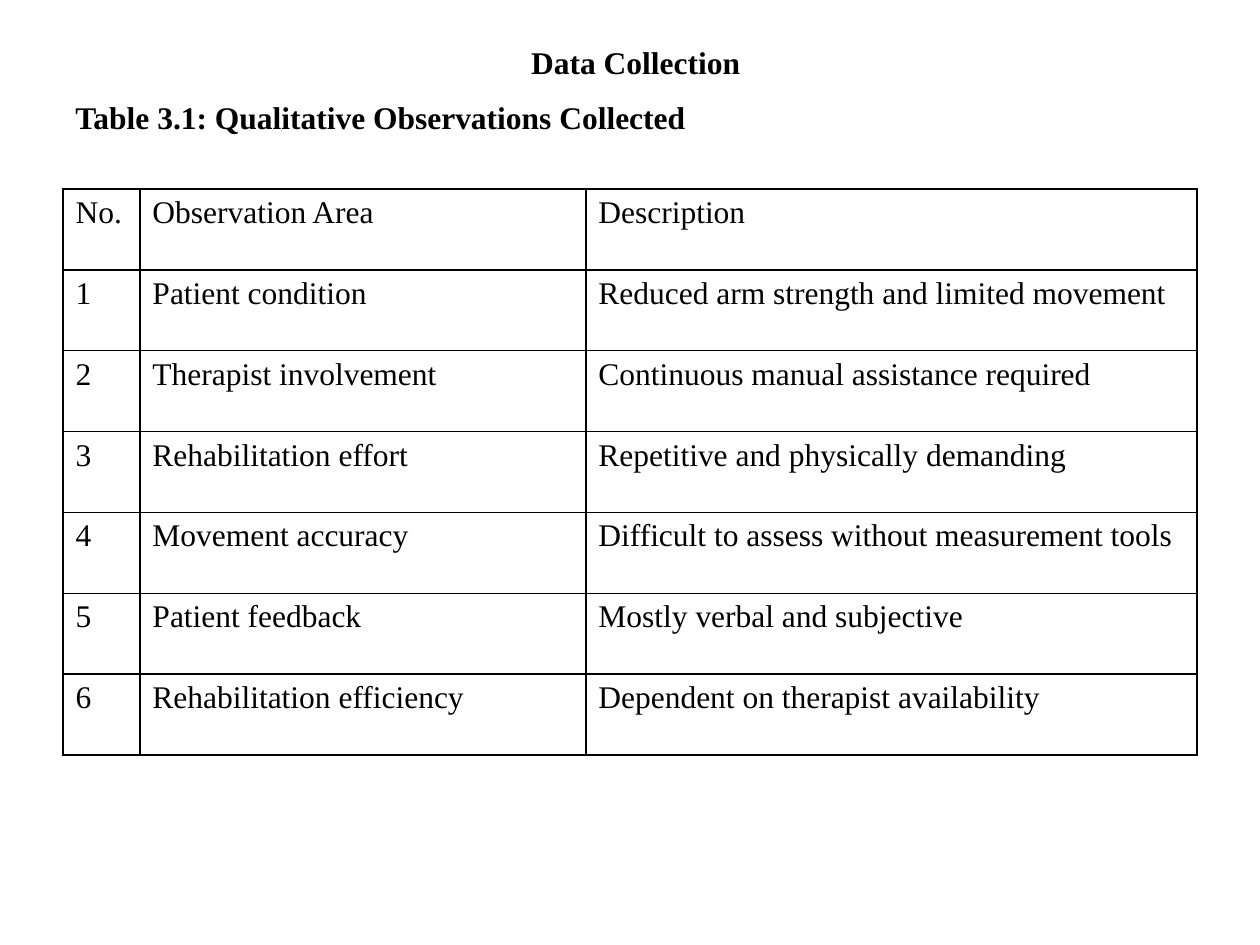
from dataclasses import dataclass

from lxml.etree import SubElement
from pptx import Presentation
from pptx.dml.color import RGBColor
from pptx.enum.text import MSO_ANCHOR
from pptx.oxml.ns import qn
from pptx.slide import Slide
from pptx.table import _Cell
from pptx.text.text import TextFrame
from pptx.util import Cm, Pt


@dataclass(frozen=True)
class Theme:
    font: str = "Times New Roman"
    ink: str = "000000"
    text_size: float = 18
    border_width: float = 1


@dataclass(frozen=True)
class Heading:
    text: str
    left: float
    top: float
    width: float
    height: float
    anchor: MSO_ANCHOR
    wrap: bool


THEME = Theme()

HEADINGS = (
    Heading("Table 3.1: Qualitative Observations Collected",
            1.27, 0.76, 22.86, 3.18, MSO_ANCHOR.MIDDLE, True),
    Heading("Data Collection", 10.46, 0.74, 4.78, 1.02, MSO_ANCHOR.TOP, False),
)

COLUMN_WIDTHS = (1.55, 8.99, 12.32)
ROW_HEIGHT = 1.63
HEADER = ("No.", "Observation Area", "Description")
OBSERVATIONS = (
    ("Patient condition", "Reduced arm strength and limited movement"),
    ("Therapist involvement", "Continuous manual assistance required"),
    ("Rehabilitation effort", "Repetitive and physically demanding"),
    ("Movement accuracy", "Difficult to assess without measurement tools"),
    ("Patient feedback", "Mostly verbal and subjective"),
    ("Rehabilitation efficiency", "Dependent on therapist availability"),
)


def write_text(frame: TextFrame, text: str, *, bold: bool = False,
               size: float = THEME.text_size) -> None:
    run = frame.paragraphs[0].add_run()
    run.text = text
    run.font.name = THEME.font
    run.font.size = Pt(size)
    run.font.bold = bold
    run.font.color.rgb = RGBColor.from_string(THEME.ink)


def add_heading(slide: Slide, heading: Heading) -> None:
    shape = slide.shapes.add_textbox(Cm(heading.left), Cm(heading.top),
                                     Cm(heading.width), Cm(heading.height))
    frame = shape.text_frame
    frame.word_wrap = heading.wrap
    frame.vertical_anchor = heading.anchor
    write_text(frame, heading.text, bold=True)


def add_borders(cell: _Cell) -> None:
    properties = cell._tc.get_or_add_tcPr()
    for side in ("a:lnL", "a:lnR", "a:lnT", "a:lnB"):
        line = SubElement(properties, qn(side), w=str(Pt(THEME.border_width)))
        fill = SubElement(line, qn("a:solidFill"))
        SubElement(fill, qn("a:srgbClr"), val=THEME.ink)


def add_observation_table(slide: Slide) -> None:
    rows = [HEADER] + [(str(number), *observation)
                       for number, observation in enumerate(OBSERVATIONS, 1)]
    table = slide.shapes.add_table(
        len(rows), len(HEADER), Cm(1.27), Cm(3.81),
        Cm(sum(COLUMN_WIDTHS)), Cm(ROW_HEIGHT * len(rows))).table
    table.first_row = False
    table.horz_banding = False
    for column, width in zip(table.columns, COLUMN_WIDTHS):
        column.width = Cm(width)
    for row, texts in zip(table.rows, rows):
        row.height = Cm(ROW_HEIGHT)
        for cell, text in zip(row.cells, texts):
            add_borders(cell)
            cell.fill.background()
            write_text(cell.text_frame, text)


def main() -> None:
    presentation = Presentation()
    presentation.slide_width = Cm(25.4)
    presentation.slide_height = Cm(19.05)
    slide = presentation.slides.add_slide(presentation.slide_layouts[6])

    # Slide title and table caption
    for heading in HEADINGS:
        add_heading(slide, heading)

    # Numbered observations
    add_observation_table(slide)

    presentation.save("out.pptx")


if __name__ == "__main__":
    main()
